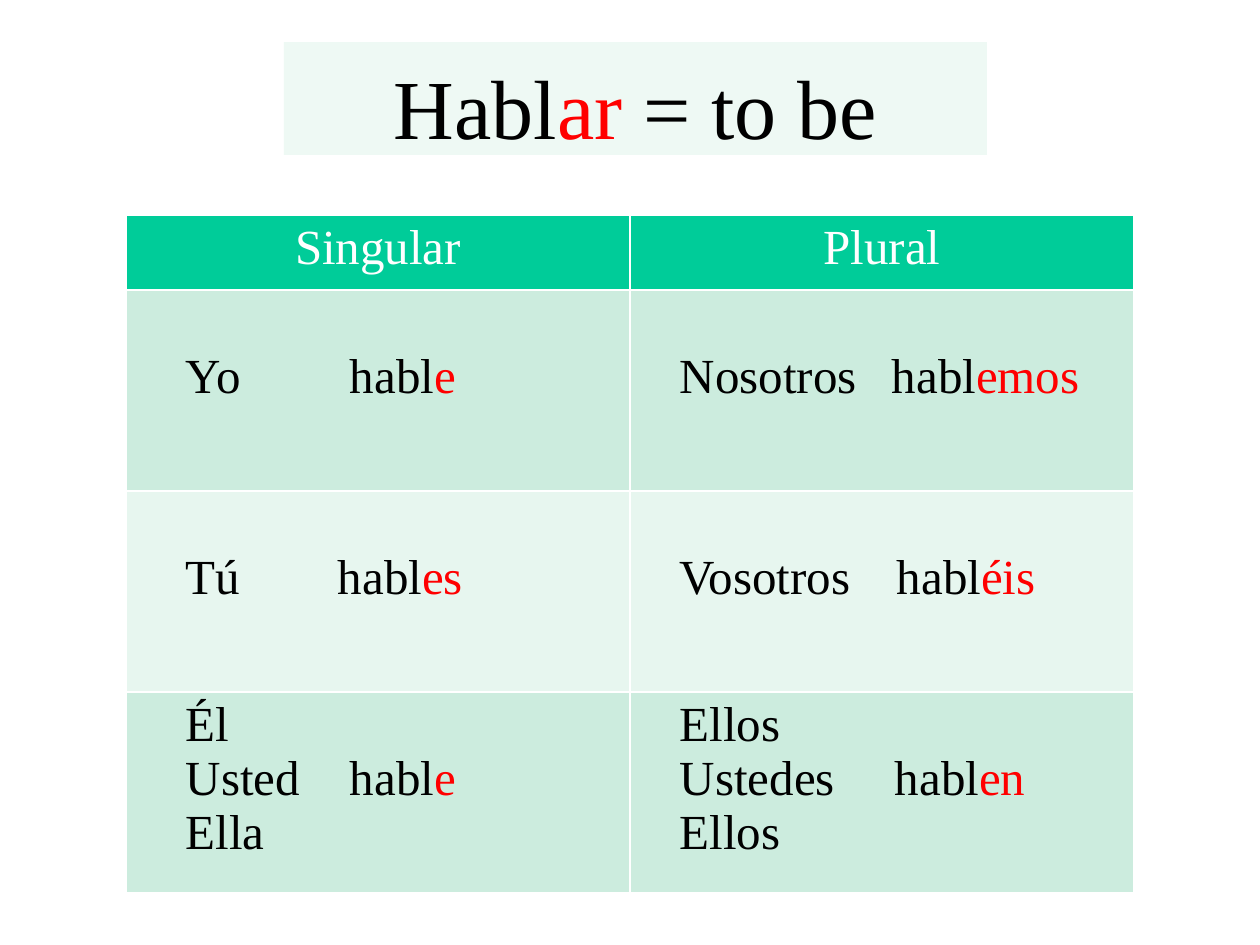
from dataclasses import dataclass

from lxml import etree
from pptx import Presentation
from pptx import util as u
from pptx.dml.color import RGBColor
from pptx.enum import text
from pptx.oxml import ns


@dataclass
class Theme:
    font: str = "Times New Roman"
    big: int = 48
    body: int = 28
    ink: str = "000000"
    pale: str = "FFFFFF"
    mark: str = "FF0000"
    head: str = "00CC99"
    panel: str = "EEF9F4"
    bands: tuple = ("CCECDE", "E7F6EF")


theme = Theme()


def px(n):
    return u.Emu(round(n * 914400 / 126))


def write(frame, lines, size=theme.body, color=theme.ink, align="LEFT", tab=0):
    """Write lines; every second part between bars is a marked ending."""
    for i, line in enumerate(lines):
        para = frame.paragraphs[0] if i == 0 else frame.add_paragraph()
        para.alignment = getattr(text.PP_ALIGN, align)
        if tab:
            stops = etree.SubElement(para._p.get_or_add_pPr(), ns.qn("a:tabLst"))
            etree.SubElement(stops, ns.qn("a:tab"), pos=str(px(tab)), algn="l")
        for j, part in enumerate(line.split("|")):
            run = para.add_run()
            run.text = part
            run.font.name = theme.font
            run.font.size = u.Pt(size)
            run.font.bold = False
            run.font.color.rgb = RGBColor.from_string(theme.mark if j % 2 else color)


deck = Presentation()
deck.slide_width, deck.slide_height = px(1260), px(945)
slide = deck.slides.add_slide(deck.slide_layouts[5])

# Title
title = slide.shapes.title
title.left, title.top, title.width, title.height = px(284), px(42), px(703), px(113)
title.fill.solid()
title.fill.fore_color.rgb = RGBColor.from_string(theme.panel)
frame = title.text_frame
frame.auto_size = text.MSO_AUTO_SIZE.NONE
frame.vertical_anchor = text.MSO_ANCHOR.TOP
frame.margin_top, frame.margin_bottom = px(14), 0
write(frame, ["Habl|ar| = to be"], size=theme.big, align="CENTER")

# Verb table: lines and the tab stop of the verb for each cell
rows = [
    [(["Yo\thabl|e"], 164), (["Nosotros\thabl|emos"], 212)],
    [(["Tú\thabl|es"], 152), (["Vosotros\thabl|éis"], 217)],
    [(["Él", "Usted\thabl|e", "Ella"], 164), (["Ellos", "Ustedes\thabl|en", "Ellos"], 215)],
]
grid = slide.shapes.add_table(4, 2, px(126), px(215), px(1008), px(679)).table
for col in grid.columns:
    col.width = px(504)
for i, row in enumerate(grid.rows):
    row.height = px(201 if i else 75)

# Header row
for i, name in enumerate(["Singular", "Plural"]):
    cell = grid.cell(0, i)
    cell.fill.solid()
    cell.fill.fore_color.rgb = RGBColor.from_string(theme.head)
    write(cell.text_frame, [name], color=theme.pale, align="CENTER")

# Body rows
for i, row in enumerate(rows):
    for j, (lines, tab) in enumerate(row):
        cell = grid.cell(i + 1, j)
        cell.fill.solid()
        cell.fill.fore_color.rgb = RGBColor.from_string(theme.bands[i % 2])
        cell.margin_left = px((60, 50)[j])
        cell.margin_top = px(60 if len(lines) == 1 else 6)
        write(cell.text_frame, lines, tab=tab)

deck.save("out.pptx")
